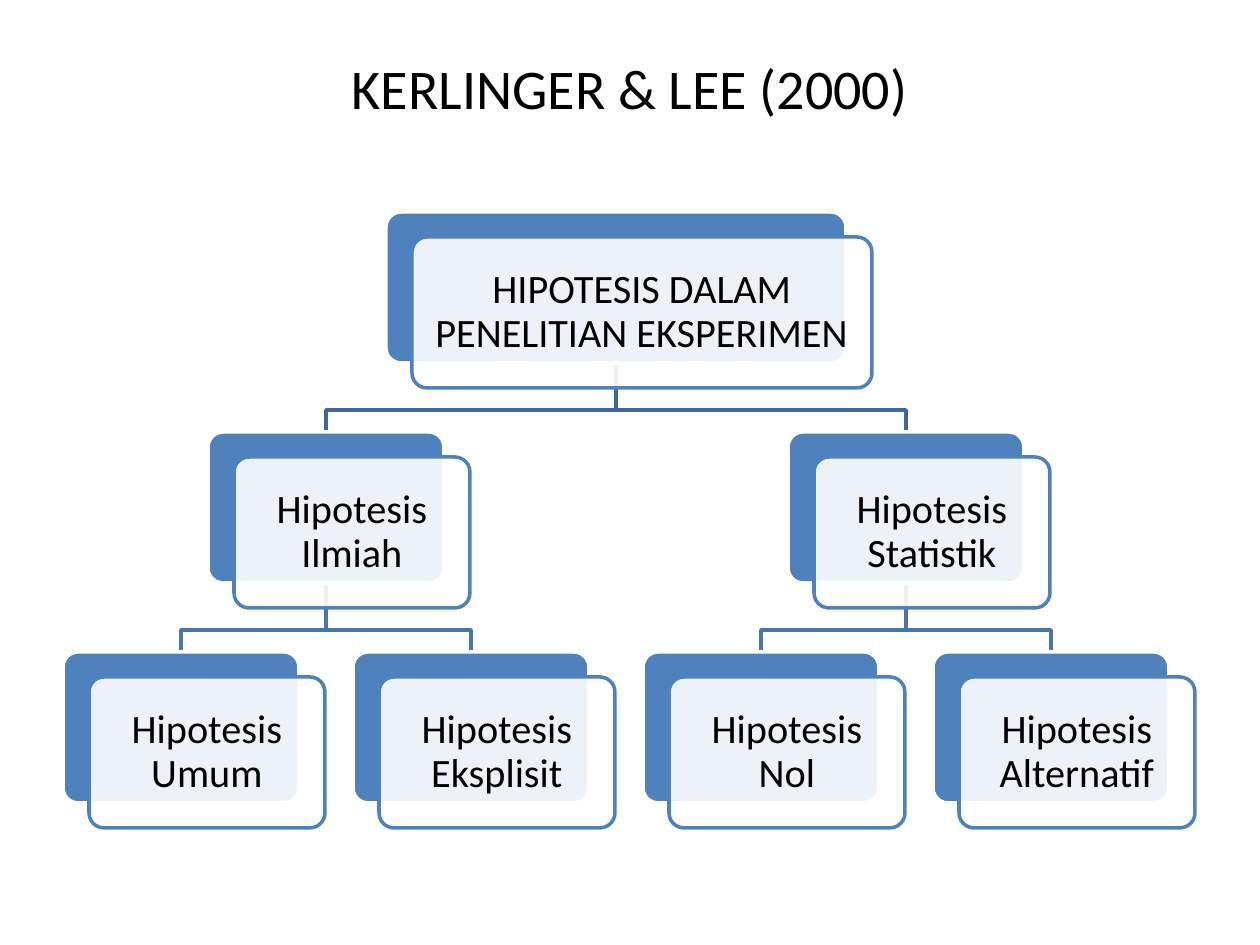
from lxml import etree
from pptx import Presentation
from pptx.dml.color import RGBColor
from pptx.enum.shapes import MSO_SHAPE
from pptx.enum.text import MSO_ANCHOR, PP_ALIGN
from pptx.oxml.ns import qn
from pptx.util import Emu, Pt

ROUNDED = MSO_SHAPE.ROUNDED_RECTANGLE
CENTER = PP_ALIGN.CENTER
MIDDLE = MSO_ANCHOR.MIDDLE

BLACK = RGBColor(0x00, 0x00, 0x00)
WHITE = RGBColor(0xFF, 0xFF, 0xFF)
BLUE = RGBColor(0x4F, 0x81, 0xBD)
LINK_COLORS = [RGBColor(0x3F, 0x67, 0x97), RGBColor(0x48, 0x75, 0xAC)]

PX = 914400 / 126
FONT = "Calibri"

# Tree geometry in px
NODE_WIDTH, ROOT_WIDTH, NODE_HEIGHT = 236, 460, 151
LEAF_STEP, LEVEL_STEP = 290, 220
FRONT_DX, FRONT_DY = 26, 25
TEXT_MARGIN, TEXT_INSET = 4, 13
ELBOW_RISE = 22

# Each node is (label, children)
TREE = ("HIPOTESIS DALAM PENELITIAN EKSPERIMEN", [
    ("Hipotesis Ilmiah", [("Hipotesis Umum", []), ("Hipotesis Eksplisit", [])]),
    ("Hipotesis Statistik", [("Hipotesis Nol", []), ("Hipotesis Alternatif", [])]),
])


def px(value):
    return Emu(round(value * PX))


def add_text(page, left, top, width, height, text, size, inset, spacing=1.0):
    box = page.shapes.add_textbox(px(left), px(top), px(width), px(height))
    frame = box.text_frame
    frame.word_wrap = True
    frame.vertical_anchor = MIDDLE
    frame.margin_left = frame.margin_right = px(inset)
    frame.margin_top = frame.margin_bottom = px(inset)
    para = frame.paragraphs[0]
    para.text = text
    para.alignment = CENTER
    para.line_spacing = spacing
    para.font.name = FONT
    para.font.size = Pt(size)
    para.font.color.rgb = BLACK


def add_card(page, left, top, width, fill, line, opacity=100):
    card = page.shapes.add_shape(ROUNDED, px(left), px(top), px(width), px(NODE_HEIGHT))
    card.adjustments[0] = 0.1
    card.shadow.inherit = False
    card.fill.solid()
    card.fill.fore_color.rgb = fill
    if opacity < 100:
        color = card.fill._xPr.find(qn("a:solidFill"))[0]
        etree.SubElement(color, qn("a:alpha"), val=str(opacity * 1000))
    card.line.color.rgb = line
    card.line.width = Pt(2)


def add_node(page, left, top, width, label):
    """Solid back card, translucent front card and the label on top."""
    add_card(page, left, top, width, BLUE, WHITE)
    left, top = left + FRONT_DX, top + FRONT_DY
    add_card(page, left, top, width, WHITE, BLUE, opacity=90)
    add_text(page, left + TEXT_MARGIN, top + TEXT_MARGIN, width - 2 * TEXT_MARGIN,
             NODE_HEIGHT - 2 * TEXT_MARGIN, label, 23, TEXT_INSET, 0.9)


def add_elbow(page, start_x, start_y, end_x, end_y, color):
    bar_y = end_y - ELBOW_RISE
    builder = page.shapes.build_freeform(start_x, start_y, scale=PX)
    builder.add_line_segments([(start_x, bar_y), (end_x, bar_y), (end_x, end_y)], close=False)
    elbow = builder.convert_to_shape()
    elbow.shadow.inherit = False
    elbow.fill.background()
    elbow.line.color.rgb = color
    elbow.line.width = Pt(2)


def lay_out(node, left, top, level=0):
    """Return (nodes, links, center, span); a parent is centred over its children."""
    label, children = node
    nodes, links, centers, span = [], [], [], 0
    for child in children:
        below, lower_links, center, width = lay_out(child, left + span, top + LEVEL_STEP, level + 1)
        nodes += below
        links += lower_links
        centers.append(center)
        span += width
    if children:
        middle = sum(centers) / len(centers)
    else:
        middle, span = left + NODE_WIDTH / 2, LEAF_STEP
    links += [(middle, top + NODE_HEIGHT, center, top + LEVEL_STEP, LINK_COLORS[level])
              for center in centers]
    width = NODE_WIDTH if level else ROOT_WIDTH
    return [(middle - width / 2, top, width, label)] + nodes, links, middle, span


def add_tree(page, left, top):
    nodes, links, _, _ = lay_out(TREE, left, top)
    # Links lie behind the cards
    for link in links:
        add_elbow(page, *link)
    for node in nodes:
        add_node(page, *node)


def main():
    deck = Presentation()
    deck.slide_width, deck.slide_height = px(1260), px(945)
    page = deck.slides.add_slide(deck.slide_layouts[6])
    # Title
    add_text(page, 63, 38, 1134, 98, "KERLINGER & LEE (2000)", 32, 6)
    # Hypothesis hierarchy
    add_tree(page, 63, 212)
    deck.save("out.pptx")


if __name__ == "__main__":
    main()
